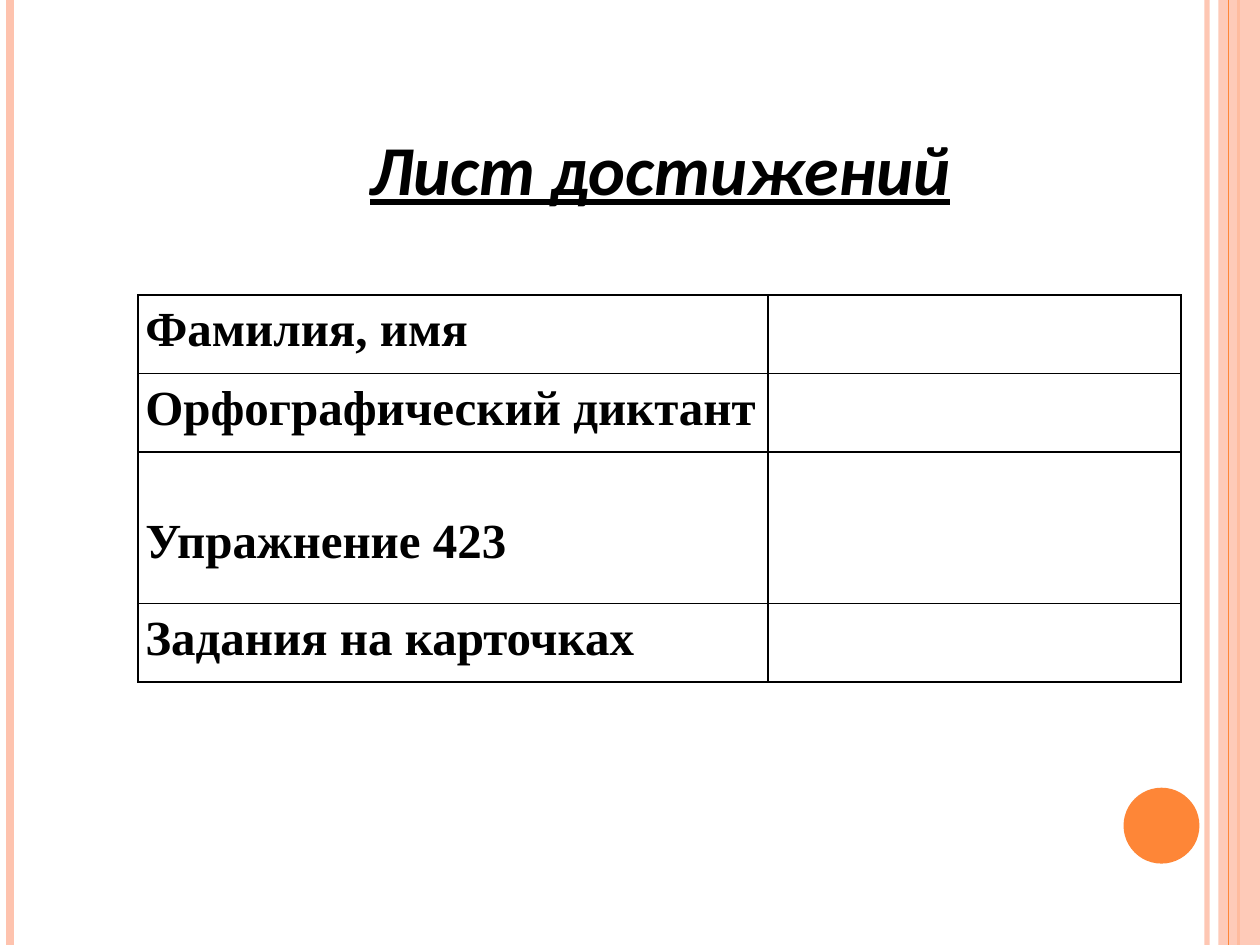
from lxml.etree import SubElement
from pptx import Presentation
from pptx.dml.color import RGBColor
from pptx.enum.shapes import MSO_CONNECTOR, MSO_SHAPE
from pptx.enum.text import MSO_ANCHOR, MSO_AUTO_SIZE, PP_ALIGN
from pptx.oxml.ns import qn
from pptx.util import Cm, Pt

BLACK = RGBColor(0x00, 0x00, 0x00)
ORANGE = RGBColor(0xFE, 0x86, 0x37)
PEACH = RGBColor(0xFE, 0xC3, 0xAE)

WIDTH, HEIGHT = Cm(25.4), Cm(19.05)
ROWS = [
    ("Фамилия, имя", Cm(1.58)),
    ("Орфографический диктант", Cm(1.58)),
    ("Упражнение 423", Cm(3.06)),
    ("Задания на карточках", Cm(1.58)),
]
COLUMN_WIDTHS = [Cm(12.7), Cm(8.33)]
TALL_ROW_INSET = Cm(1.1)


def set_alpha(fill_parent, percent):
    color = fill_parent.find(qn("a:solidFill"))[0]
    SubElement(color, qn("a:alpha"), val=str(percent * 1000))


def add_stripe(page, x, color, width, alpha=None):
    """Draw a vertical line over the full slide height."""
    stripe = page.shapes.add_connector(MSO_CONNECTOR.STRAIGHT, x, 0, x, HEIGHT)
    stripe.line.color.rgb = color
    stripe.line.width = Pt(width)
    properties = stripe._element.spPr
    if alpha:
        set_alpha(properties.find(qn("a:ln")), alpha)
    SubElement(properties, qn("a:effectLst"))


def add_filled_shape(page, kind, left, top, width, height, color):
    shape = page.shapes.add_shape(kind, left, top, width, height)
    shape.shadow.inherit = False
    shape.fill.solid()
    shape.fill.fore_color.rgb = color
    shape.line.fill.background()
    return shape


def add_decoration(page):
    add_stripe(page, Cm(24.33), PEACH, 3, alpha=93)
    add_stripe(page, Cm(0.2), PEACH, 4.5)
    add_stripe(page, Cm(24.97), ORANGE, 1.5)
    band_width = Cm(0.84)
    band = add_filled_shape(page, MSO_SHAPE.RECTANGLE, WIDTH - band_width, 0,
                            band_width, HEIGHT, PEACH)
    set_alpha(band._element.spPr, 87)
    add_stripe(page, Cm(24.76), ORANGE, 0.75)
    add_filled_shape(page, MSO_SHAPE.OVAL, Cm(22.65), Cm(15.88),
                     Cm(1.53), Cm(1.53), ORANGE)


def style_text(para, text, font_name, size):
    para.text = text
    font = para.runs[0].font
    font.name = font_name
    font.size = Pt(size)
    font.bold = True
    font.color.rgb = BLACK
    return font


def add_title(page, left, top, width, height):
    box = page.shapes.add_textbox(left, top, width, height)
    frame = box.text_frame
    frame.word_wrap = False
    frame.auto_size = MSO_AUTO_SIZE.SHAPE_TO_FIT_TEXT
    frame.vertical_anchor = MSO_ANCHOR.MIDDLE
    para = frame.paragraphs[0]
    para.alignment = PP_ALIGN.CENTER
    font = style_text(para, "Лист достижений", "Calibri", 40)
    font.italic = True
    font.underline = True


def style_cell(cell):
    """Give the cell black borders, no fill and narrow margins."""
    properties = cell._tc.get_or_add_tcPr()
    for side in ("lnL", "lnR", "lnT", "lnB"):
        border = SubElement(properties, qn(f"a:{side}"), w=str(Pt(1)))
        fill = SubElement(border, qn("a:solidFill"))
        SubElement(fill, qn("a:srgbClr"), val=str(BLACK))
    cell.fill.background()
    cell.margin_left = cell.margin_right = Cm(0.15)
    cell.margin_top = cell.margin_bottom = 0


def add_achievement_table(page, left, top):
    width = sum(COLUMN_WIDTHS)
    height = sum(row_height for _, row_height in ROWS)
    table = page.shapes.add_table(len(ROWS), len(COLUMN_WIDTHS),
                                  left, top, width, height).table
    table.first_row = False
    table.horz_banding = False
    for column, column_width in zip(table.columns, COLUMN_WIDTHS):
        column.width = column_width
    for row, (label, row_height) in zip(table.rows, ROWS):
        row.height = row_height
        for cell in row.cells:
            style_cell(cell)
        label_cell = row.cells[0]
        if row_height > Cm(2):
            label_cell.margin_top = TALL_ROW_INSET
        para = label_cell.text_frame.paragraphs[0]
        para.line_spacing = 1.15
        style_text(para, label, "Times New Roman", 28)


def main():
    deck = Presentation()
    deck.slide_width, deck.slide_height = WIDTH, HEIGHT
    page = deck.slides.add_slide(deck.slide_layouts[6])
    add_decoration(page)
    add_achievement_table(page, Cm(2.78), Cm(5.95))
    add_title(page, Cm(7.14), Cm(2.39), Cm(12.34), Cm(1.96))
    deck.save("out.pptx")


if __name__ == "__main__":
    main()
